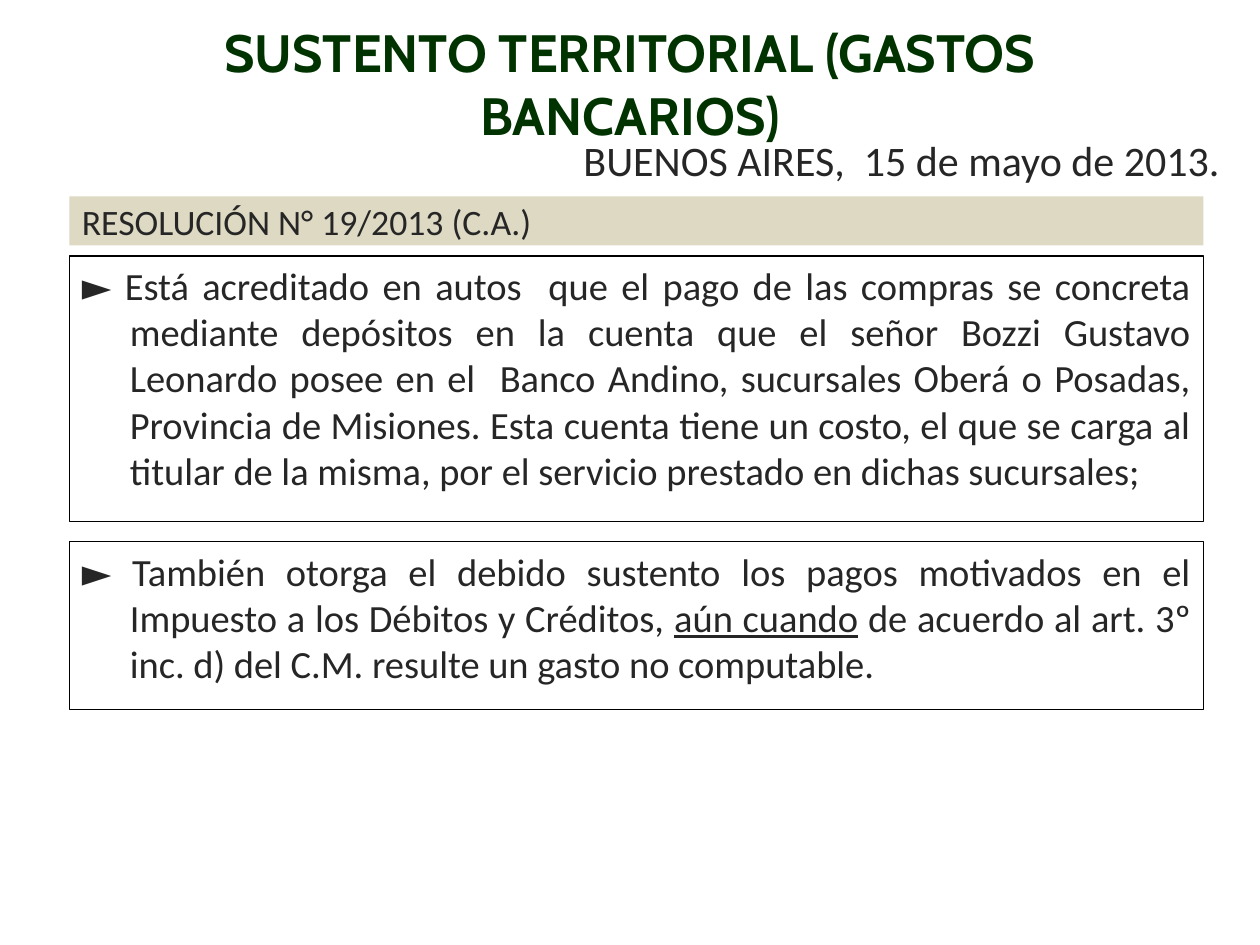
"""Build the slide on territorial nexus and bank charges."""
from pptx import Presentation
from pptx import util as u
from pptx.dml.color import RGBColor
from pptx.enum import shapes, text

ALIGN, ANCHOR = text.PP_ALIGN, text.MSO_ANCHOR

THEME = {
    "title": {"font": "Cabin", "size": 30, "color": "003300", "bold": True},
    "date": {"font": "Calibri", "size": 24, "color": "262626", "bold": False},
    "heading": {"font": "Calibri", "size": 20.4, "color": "262626", "bold": False},
    "body": {"font": "Calibri", "size": 22, "color": "262626", "bold": False},
    "band": "DDD9C3",
    "border": "000000",
    "border_width": 0.75,
}

WIDTH, LEFT, HANGING = 22.86, 1.4, 0.97

TITLE = ["SUSTENTO TERRITORIAL (GASTOS BANCARIOS)"]
DATE = ["BUENOS AIRES,  15 de mayo de 2013."]
HEADING = ["RESOLUCIÓN N° 19/2013 (C.A.)"]
UNDERLINED = "aún cuando"
ARGUMENTS = [
    (5.16, 5.36, [
        "► Está acreditado en autos  que el pago de las compras se concreta "
        "mediante depósitos en la cuenta que el señor Bozzi Gustavo Leonardo "
        "posee en el  Banco Andino, sucursales Oberá o Posadas, Provincia de "
        "Misiones. Esta cuenta tiene un costo, el que se carga al titular de la "
        "misma, por el servicio prestado en dichas sucursales;",
    ]),
    (10.92, 3.38, [
        "► También otorga el debido sustento los pagos motivados en el "
        "Impuesto a los Débitos y Créditos, ",
        UNDERLINED,
        " de acuerdo al art. 3º inc. d) del C.M. resulte un gasto no computable.",
    ]),
]


def write(box, spans, role, align, anchor=ANCHOR.TOP, hanging=HANGING):
    style = THEME[role]
    frame = box.text_frame
    frame.word_wrap = True
    frame.vertical_anchor = anchor
    paragraph = frame.paragraphs[0]
    paragraph.alignment = align
    if hanging:
        properties = paragraph._p.get_or_add_pPr()
        properties.set("marL", str(u.Cm(hanging)))
        properties.set("indent", str(-u.Cm(hanging)))
    for words in spans:
        span = paragraph.add_run()
        span.text = words
        if words == UNDERLINED:
            span.font.underline = True
    font = paragraph.font
    font.name = style["font"]
    font.size = u.Pt(style["size"])
    font.bold = style["bold"]
    font.color.rgb = RGBColor.from_string(style["color"])


def add_label(page, left, top, height):
    return page.shapes.add_textbox(u.Cm(left), u.Cm(top), u.Cm(WIDTH), u.Cm(height))


def add_panel(page, top, height, fill=None):
    box = page.shapes.add_shape(
        shapes.MSO_SHAPE.RECTANGLE, u.Cm(LEFT), u.Cm(top), u.Cm(WIDTH), u.Cm(height))
    box.shadow.inherit = False
    if fill:
        box.fill.solid()
        box.fill.fore_color.rgb = RGBColor.from_string(fill)
        box.line.fill.background()
    else:
        box.fill.background()
        box.line.color.rgb = RGBColor.from_string(THEME["border"])
        box.line.width = u.Pt(THEME["border_width"])
    return box


def main():
    deck = Presentation()
    deck.slide_width, deck.slide_height = u.Cm(25.4), u.Cm(19.05)
    page = deck.slides.add_slide(deck.slide_layouts[6])

    write(add_label(page, 1.27, 0.76, 1.83), TITLE, "title",
          ALIGN.CENTER, ANCHOR.MIDDLE, hanging=0)
    write(add_label(page, 1.98, 2.59, 1.4), DATE, "date", ALIGN.RIGHT)
    write(add_panel(page, 3.96, 0.99, THEME["band"]), HEADING, "heading",
          ALIGN.LEFT, ANCHOR.MIDDLE)
    for top, height, spans in ARGUMENTS:
        write(add_panel(page, top, height), spans, "body", ALIGN.JUSTIFY)

    deck.save("out.pptx")


if __name__ == "__main__":
    main()
